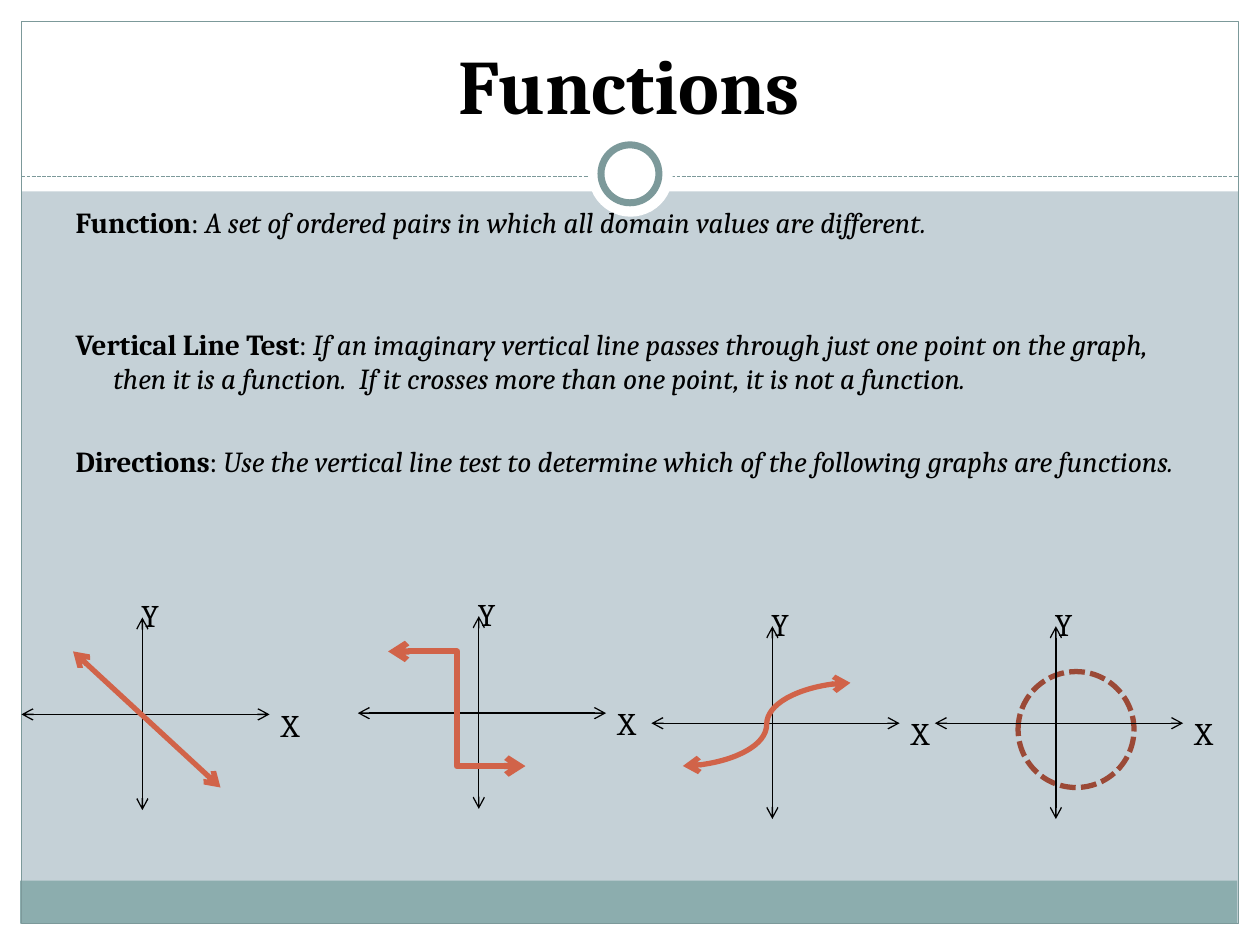
"""Build a slide that introduces functions and the vertical line test."""
import pptx
import pptx.dml.color
import pptx.enum.dml
import pptx.enum.shapes
import pptx.enum.text
import pptx.oxml
import pptx.oxml.ns
import pptx.util

Inches = pptx.util.Inches
Pt = pptx.util.Pt
SHAPES = pptx.enum.shapes.MSO_SHAPE
CONNECTORS = pptx.enum.shapes.MSO_CONNECTOR
DASH = pptx.enum.dml.MSO_LINE.SQUARE_DOT

FONT = "Cambria"
BLACK, WHITE = "000000", "FFFFFF"
BACKGROUND, BAND, FRAME = "C5D1D7", "8CADAE", "7C999A"
CURVE, CIRCLE = "D16349", "9B4936"

DEFINITIONS = [
    ("Function", "A set of ordered pairs in which all domain values are different.", 3),
    ("Vertical Line Test",
     "If an imaginary vertical line passes through just one point on the graph, "
     "then it is a function.  If it crosses more than one point, it is not a function.", 51),
    ("Directions",
     "Use the vertical line test to determine which of the following graphs are functions.", 28),
]
ORIGINS = [(1.13, 5.67), (3.8, 5.66), (6.13, 5.74), (8.38, 5.74)]
GRAPHS = [
    (CONNECTORS.CURVE, (5.42, 6.08), (6.75, 5.42), 3),
    (CONNECTORS.STRAIGHT, (0.58, 5.17), (1.75, 6.25), 3),
    (CONNECTORS.ELBOW, (3.08, 5.17), (4.17, 6.08), 3.5),
]


def rgb(color):
    """Turn a hex string into a colour."""
    return pptx.dml.color.RGBColor.from_string(color)


def style_line(line, color, width, dash=None):
    """Set the colour, width and dash of a line."""
    line.color.rgb = rgb(color)
    line.width = Pt(width)
    if dash is not None:
        line.dash_style = dash


def add_preset(slide, kind, box, fill=None, line=None):
    """Add a preset shape with an optional fill and an optional line."""
    shape = slide.shapes.add_shape(kind, *map(Inches, box))
    shape.shadow.inherit = False
    if fill:
        shape.fill.solid()
        shape.fill.fore_color.rgb = rgb(fill)
    else:
        shape.fill.background()
    if line:
        style_line(shape.line, *line)
    else:
        shape.line.fill.background()


def add_line(shapes, start, end, color, width, kind=CONNECTORS.STRAIGHT, dash=None, arrows=True):
    """Add a connector, with an open arrowhead at each end if wanted."""
    connector = shapes.add_connector(kind, *map(Inches, (*start, *end)))
    style_line(connector.line, color, width, dash)
    properties = connector.element.spPr
    if arrows:
        outline = properties.find(pptx.oxml.ns.qn("a:ln"))
        for tag in ("headEnd", "tailEnd"):
            outline.append(pptx.oxml.parse_xml(
                f'<a:{tag} {pptx.oxml.ns.nsdecls("a")} type="arrow"/>'))
    properties.append(pptx.oxml.parse_xml(f'<a:effectLst {pptx.oxml.ns.nsdecls("a")}/>'))


def add_run(paragraph, text, size, bold=False, italic=False):
    """Add one formatted run to a paragraph."""
    run = paragraph.add_run()
    run.text = text
    run.font.name = FONT
    run.font.size = Pt(size)
    run.font.bold = bold
    run.font.italic = italic
    run.font.color.rgb = rgb(BLACK)


def add_label(shapes, text, left, top):
    """Add the letter that names an axis."""
    frame = shapes.add_textbox(*map(Inches, (left, top, 0.19, 0.19))).text_frame
    frame.word_wrap = True
    frame.auto_size = pptx.enum.text.MSO_AUTO_SIZE.SHAPE_TO_FIT_TEXT
    add_run(frame.paragraphs[0], text, 18)


def add_axes(slide, x, y):
    """Add a group with both axes and their labels around an origin."""
    shapes = slide.shapes.add_group_shape().shapes
    add_line(shapes, (x, y - 0.77), (x, y + 0.76), BLACK, 0.75)
    add_line(shapes, (x - 0.96, y), (x + 1.01, y), BLACK, 0.75)
    add_label(shapes, "X", x + 1.01, y - 0.12)
    add_label(shapes, "Y", x - 0.1, y - 0.99)


def add_decoration(slide):
    """Add the margins, header, footer band, frame and header ring."""
    for box in ((0, 7.33, 10, 0.17), (0, 0, 10, 1.52), (0, 0, 0.17, 7.5), (9.83, 0, 0.17, 7.5)):
        add_preset(slide, SHAPES.RECTANGLE, box, WHITE)
    add_preset(slide, SHAPES.RECTANGLE, (0.16, 6.99, 9.66, 0.34), BAND)
    add_preset(slide, SHAPES.RECTANGLE, (0.17, 0.17, 9.66, 7.16), line=(FRAME, 0.75))
    add_line(slide.shapes, (0.17, 1.4), (9.83, 1.4), FRAME, 0.75, dash=DASH, arrows=False)
    add_preset(slide, SHAPES.OVAL, (4.67, 1.05, 0.67, 0.67), WHITE)
    add_preset(slide, SHAPES.OVAL, (4.77, 1.15, 0.46, 0.46), WHITE, (FRAME, 4))


def place_placeholder(shape, box, anchor):
    """Move a placeholder to its box, in front of the shapes so far."""
    shape.left, shape.top, shape.width, shape.height = map(Inches, box)
    shape.element.getparent().append(shape.element)
    frame = shape.text_frame
    frame.word_wrap = True
    frame.auto_size = pptx.enum.text.MSO_AUTO_SIZE.NONE
    frame.vertical_anchor = anchor
    return frame


def fill_title(shape):
    """Write the slide title."""
    frame = place_placeholder(shape, (0.33, 0.25, 9.33, 0.83), pptx.enum.text.MSO_ANCHOR.MIDDLE)
    paragraph = frame.paragraphs[0]
    paragraph.alignment = pptx.enum.text.PP_ALIGN.CENTER
    add_run(paragraph, "Functions", 44, bold=True)


def fill_body(shape):
    """Write each term with its explanation on a hanging indent."""
    frame = place_placeholder(shape, (0.5, 1.58, 9, 2.92), pptx.enum.text.MSO_ANCHOR.TOP)
    for index, (term, explanation, space) in enumerate(DEFINITIONS):
        paragraph = frame.add_paragraph() if index else frame.paragraphs[0]
        paragraph.space_before = Pt(space)
        paragraph.line_spacing = Pt(19.2)
        properties = paragraph._p.get_or_add_pPr()
        properties.set("marL", str(Inches(0.3)))
        properties.set("indent", str(Inches(-0.3)))
        properties.append(pptx.oxml.parse_xml(f'<a:buNone {pptx.oxml.ns.nsdecls("a")}/>'))
        add_run(paragraph, term, 16.6, bold=True)
        add_run(paragraph, ": ", 16.6)
        add_run(paragraph, explanation, 16.6, italic=True)


def main():
    """Build and save the presentation."""
    presentation = pptx.Presentation()
    presentation.slide_width, presentation.slide_height = Inches(10), Inches(7.5)
    slide = presentation.slides.add_slide(presentation.slide_layouts[1])
    slide.background.fill.solid()
    slide.background.fill.fore_color.rgb = rgb(BACKGROUND)
    add_decoration(slide)
    add_preset(slide, SHAPES.OVAL, (8.08, 5.33, 0.92, 0.92), BACKGROUND, (CIRCLE, 3, DASH))
    fill_title(slide.shapes.title)
    fill_body(slide.placeholders[1])
    for x, y in ORIGINS:
        add_axes(slide, x, y)
    for kind, start, end, width in GRAPHS:
        add_line(slide.shapes, start, end, CURVE, width, kind)
    presentation.save("out.pptx")


if __name__ == "__main__":
    main()
